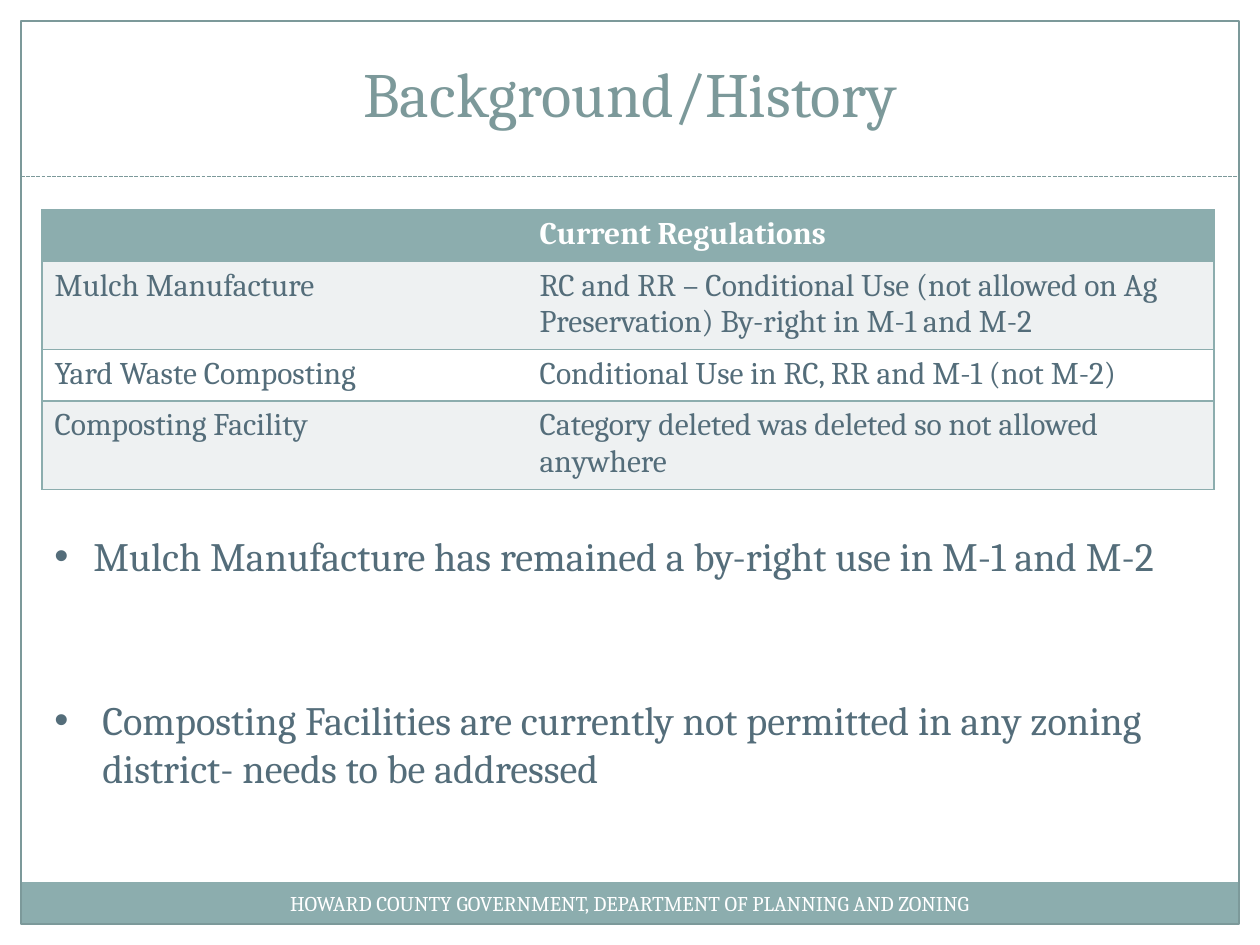
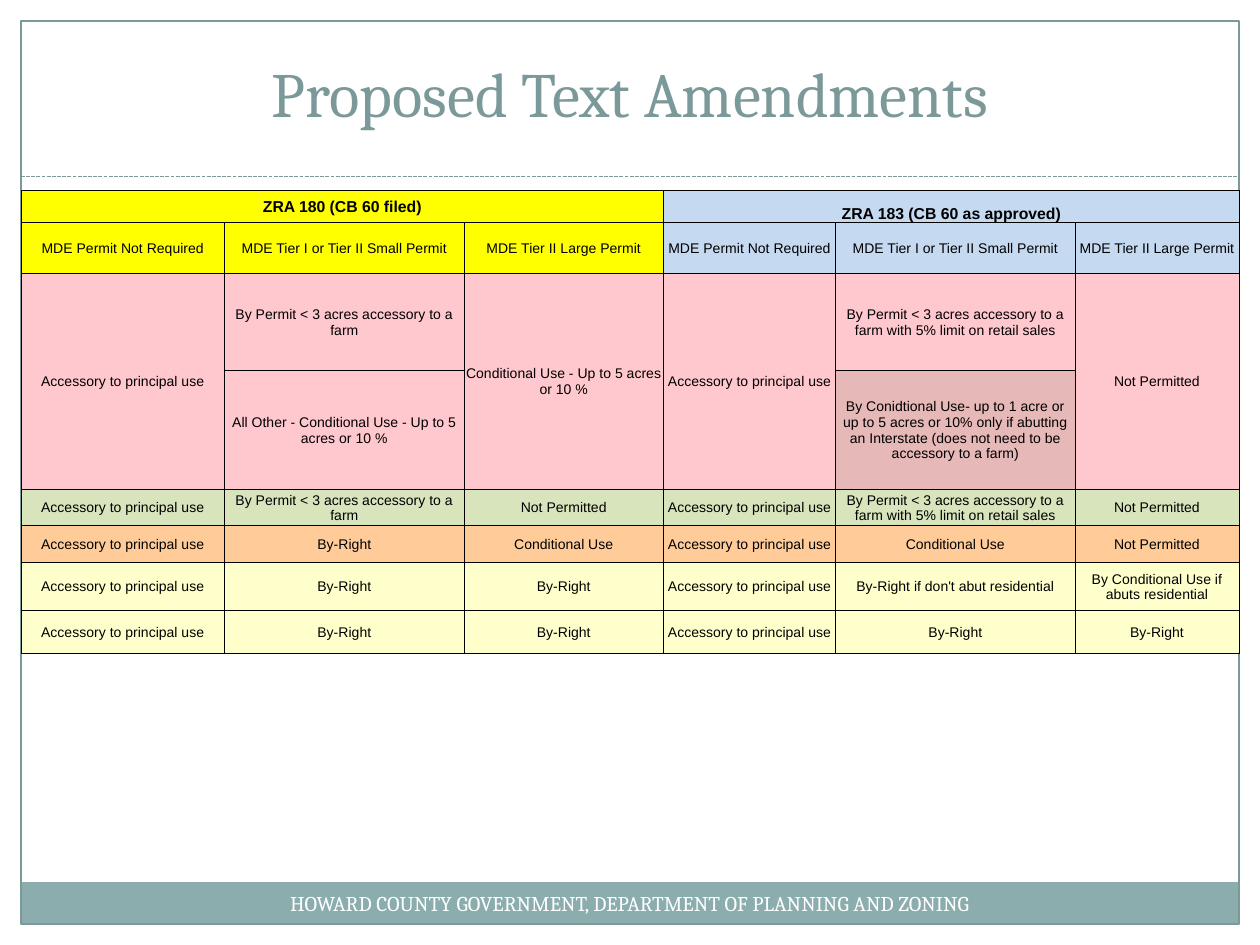
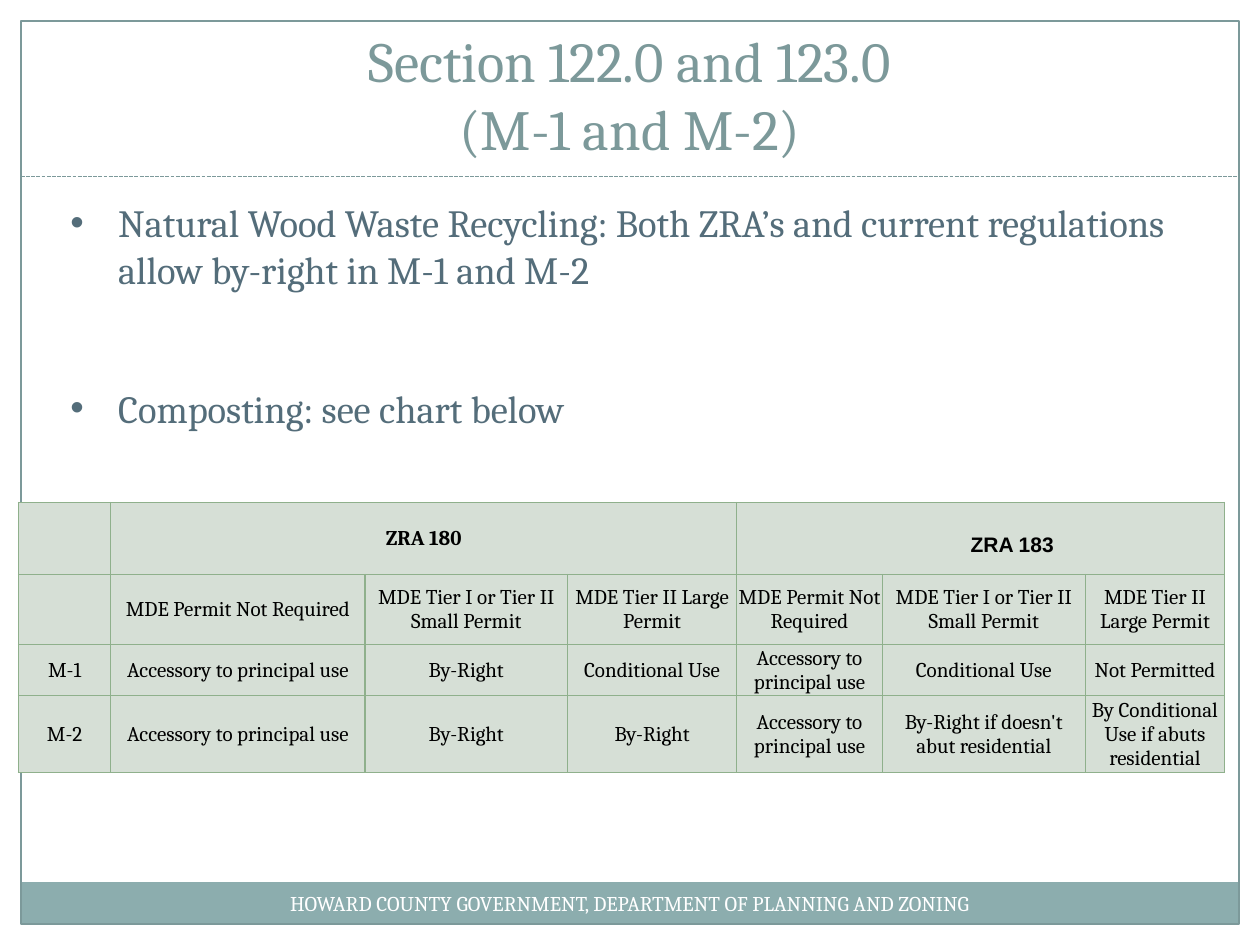
import pptx
import pptx.util
import pptx.dml.color
import pptx.enum.dml
import pptx.enum.shapes
import pptx.enum.text
import pptx.oxml.ns
from lxml import etree

RGB = pptx.dml.color.RGBColor
TEAL = RGB(0x8C, 0xAD, 0xAE)
DEEP_TEAL = RGB(0x7C, 0x99, 0x9A)
SLATE = RGB(0x54, 0x6D, 0x7A)
MIST = RGB(0xEE, 0xF1, 0xF2)
WHITE = RGB(0xFF, 0xFF, 0xFF)
BLACK = RGB(0x00, 0x00, 0x00)
YELLOW = RGB(0xFF, 0xFF, 0x00)
SKY = RGB(0xC5, 0xD9, 0xF1)
PINK = RGB(0xFF, 0xC7, 0xCE)
ROSE = RGB(0xE6, 0xB8, 0xB7)
LIME = RGB(0xD8, 0xE4, 0xBC)
PEACH = RGB(0xFF, 0xCC, 0x99)
CREAM = RGB(0xFF, 0xFF, 0xCC)
SAGE = RGB(0xD6, 0xDF, 0xD6)
LEAF = RGB(0x8F, 0xB0, 0x8C)

ALIGN = pptx.enum.text.PP_ALIGN
ANCHOR = pptx.enum.text.MSO_ANCHOR
COLUMNS, ROWS = 60, 45
FOOTER = "HOWARD COUNTY GOVERNMENT, DEPARTMENT OF PLANNING AND ZONING"
PERMITS = ["MDE Permit Not Required", "MDE Tier I or Tier II Small Permit",
           "MDE Tier II Large Permit"]
ACCESSORY = "Accessory to principal use"
FARM = "By Permit < 3 acres accessory to a farm"
FARM_RETAIL = FARM + " with 5% limit on retail sales"
RIGHT, CONDITIONAL, DENIED = "By-Right", "Conditional Use", "Not Permitted"
ABUTS = "By Conditional Use if abuts residential"


def sub(parent, tag, **attributes):
    return etree.SubElement(parent, pptx.oxml.ns.qn(tag), attributes)


def write(tf, text, size=18, color=SLATE, font="Cambria", bold=False, align=ALIGN.LEFT,
          bullet=False, indent=0, gap=0, spacing=None):
    lines = [text] if isinstance(text, str) else text
    for i, line in enumerate(lines):
        p = tf.paragraphs[0] if i == 0 else tf.add_paragraph()
        p.text = line
        p.alignment = align
        pPr = p._p.get_or_add_pPr()
        if indent:
            margin = pptx.util.Inches(indent)
            pPr.set("marL", str(margin))
            pPr.set("indent", str(-margin if bullet else 0))
        if bullet:
            sub(pPr, "a:buFont", typeface="Arial")
            sub(pPr, "a:buChar", char="•")
        if i and gap:
            p.space_before = pptx.util.Pt(gap)
        if spacing:
            p.line_spacing = spacing
        for r in p.runs:
            r.font.size = pptx.util.Pt(size)
            r.font.name = font
            r.font.bold = bold
            r.font.color.rgb = color


class Deck:
    def __init__(self):
        self.prs = pptx.Presentation()
        self.prs.slide_width = pptx.util.Inches(10)
        self.prs.slide_height = pptx.util.Inches(7.5)
        self.s = None

    def x(self, columns):
        return round(self.prs.slide_width * columns / COLUMNS)

    def y(self, rows):
        return round(self.prs.slide_height * rows / ROWS)

    def area(self, left, top, width, height):
        return self.x(left), self.y(top), self.x(width), self.y(height)

    def slide(self, title, size=36, top=1.5):
        self.s = self.prs.slides.add_slide(self.prs.slide_layouts[6])
        self.rect(1, 42, 58, 2, fill=TEAL)
        self.rect(1, 1, 58, 43, line=DEEP_TEAL)
        self.rule(1, 59, 8.4)
        self.text(2, top, 56, 5, title, anchor=ANCHOR.BOTTOM,
                  size=size, color=DEEP_TEAL, align=ALIGN.CENTER)
        self.text(1, 42, 58, 2, FOOTER, anchor=ANCHOR.MIDDLE,
                  size=12, color=WHITE, align=ALIGN.CENTER)

    def rect(self, left, top, width, height, fill=None, line=None):
        sp = self.s.shapes.add_shape(pptx.enum.shapes.MSO_SHAPE.RECTANGLE,
                                     *self.area(left, top, width, height))
        sp.shadow.inherit = False
        if fill is None:
            sp.fill.background()
        else:
            sp.fill.solid()
            sp.fill.fore_color.rgb = fill
        if line is None:
            sp.line.fill.background()
        else:
            sp.line.color.rgb = line
            sp.line.width = pptx.util.Pt(0.75)

    def rule(self, start, end, row):
        sp = self.s.shapes.add_connector(pptx.enum.shapes.MSO_CONNECTOR.STRAIGHT,
                                         self.x(start), self.y(row), self.x(end), self.y(row))
        sp.line.color.rgb = DEEP_TEAL
        sp.line.width = pptx.util.Pt(0.75)
        sp.line.dash_style = pptx.enum.dml.MSO_LINE.SQUARE_DOT
        sub(sp._element.spPr, "a:effectLst")

    def text(self, left, top, width, height, text, anchor=ANCHOR.TOP, **style):
        tf = self.s.shapes.add_textbox(*self.area(left, top, width, height)).text_frame
        tf.word_wrap = True
        tf.vertical_anchor = anchor
        write(tf, text, **style)

    def border(self, cell, sides, color, width):
        tcPr = cell._tc.get_or_add_tcPr()
        for i, side in enumerate("LRTB"):
            ln = sub(tcPr, "a:ln" + side, w=str(pptx.util.Pt(width)))
            if side in sides:
                sub(sub(ln, "a:solidFill"), "a:srgbClr", val=str(color))
            else:
                sub(ln, "a:noFill")
            tcPr.insert(i, ln)

    def table(self, left, top, widths, heights, data, fill, style, sides,
              line, weight, merges=(), tight=True):
        table = self.s.shapes.add_table(len(heights), len(widths), *self.area(
            left, top, sum(widths), sum(heights))).table
        table.first_row = table.horz_banding = False
        for column, width in zip(table.columns, widths):
            column.width = self.x(width)
        for row, height in zip(table.rows, heights):
            row.height = self.y(height)
        for r, values in enumerate(data):
            for c, value in enumerate(values):
                cell = table.cell(r, c)
                cell.fill.solid()
                cell.fill.fore_color.rgb = fill(r, c)
                self.border(cell, sides(c), line, weight)
                look = dict(style(r, c))
                cell.vertical_anchor = look.pop("anchor", ANCHOR.MIDDLE if tight else ANCHOR.TOP)
                if tight:
                    cell.margin_left = cell.margin_right = cell.margin_top = pptx.util.Inches(0.01)
                    cell.margin_bottom = 0
                    look["align"] = ALIGN.CENTER
                if value:
                    write(cell.text_frame, value, **look)
        for r1, c1, r2, c2 in merges:
            table.cell(r1, c1).merge(table.cell(r2, c2))


def background(deck):
    deck.slide("Background/History")
    data = [
        ["", "Current Regulations"],
        ["Mulch Manufacture",
         "RC and RR – Conditional Use (not allowed on Ag Preservation) By-right in M-1 and M-2"],
        ["Yard Waste Composting", "Conditional Use in RC, RR and M-1 (not M-2)"],
        ["Composting Facility", "Category deleted was deleted so not allowed anywhere"],
    ]
    deck.table(2, 10, [23.1, 32.7], [2.45, 4.05, 2.45, 4.05], data,
               fill=lambda r, c: [TEAL, MIST, WHITE, MIST][r],
               style=lambda r, c: {"bold": r == 0, "color": SLATE if r else WHITE},
               sides=lambda c: ["LTB", "RTB"][c], line=TEAL, weight=1, tight=False)
    deck.text(2, 25, 54.8, 5.3, "Mulch Manufacture has remained a by-right use in M-1 and M-2",
              size=23, bullet=True, indent=0.31)
    deck.text(2, 32.8, 53.2, 5.3, "Composting Facilities are currently not permitted in any "
              "zoning district- needs to be addressed", size=23, bullet=True, indent=0.38)


def amendments(deck):
    deck.slide("Proposed Text Amendments")
    data = [
        ["ZRA 180 (CB 60 filed)", "", "", "ZRA 183 (CB 60 as approved)", "", ""],
        PERMITS * 2,
        [ACCESSORY, FARM, "Conditional Use - Up to 5 acres or 10 %", ACCESSORY, FARM_RETAIL, DENIED],
        ["", "All Other - Conditional Use - Up to 5 acres or 10 %", "", "",
         "By Conidtional Use- up to 1 acre or up to 5 acres or 10% only if abutting an "
         "Interstate (does not need to be accessory to a farm)", ""],
        [ACCESSORY, FARM, DENIED, ACCESSORY, FARM_RETAIL, DENIED],
        [ACCESSORY, RIGHT, CONDITIONAL, ACCESSORY, CONDITIONAL, DENIED],
        [ACCESSORY, RIGHT, RIGHT, ACCESSORY, "By-Right if don't abut residential", ABUTS],
        [ACCESSORY, RIGHT, RIGHT] * 1 + [ACCESSORY, RIGHT, RIGHT],
    ]
    bands = [PINK, PINK, LIME, PEACH, CREAM, CREAM]

    def fill(r, c):
        if r < 2:
            return YELLOW if c < 3 else SKY
        return ROSE if (r, c) == (3, 4) else bands[r - 2]

    def style(r, c):
        return {"font": "Arial", "color": BLACK, "size": 8 if r else 9, "bold": r == 0,
                "anchor": ANCHOR.BOTTOM if (r, c) == (0, 3) else ANCHOR.MIDDLE}

    deck.table(1, 9.06, [9.7, 11.4, 9.5, 8.2, 11.4, 7.8],
               [1.55, 2.4, 4.63, 5.65, 1.75, 1.75, 2.28, 2.05], data, fill, style,
               sides=lambda c: "LRTB", line=BLACK, weight=0.5,
               merges=[(0, 0, 0, 2), (0, 3, 0, 5)] + [(2, c, 3, c) for c in (0, 2, 3, 5)])


def sections(deck):
    deck.slide("Section 122.0 and 123.0\n(M-1 and M-2)", size=32.4, top=3)
    data = [
        ["", "ZRA 180", "", "", "ZRA 183", "", ""],
        [""] + PERMITS * 2,
        ["M-1", ACCESSORY, RIGHT, CONDITIONAL, ACCESSORY, CONDITIONAL, DENIED],
        ["M-2", ACCESSORY, RIGHT, RIGHT, ACCESSORY, "By-Right if doesn't abut residential", ABUTS],
    ]

    def style(r, c):
        look = {"size": 12, "color": BLACK, "bold": r == 0}
        if (r, c) == (0, 4):
            look.update(font="Arial", indent=0.5, spacing=1.5)
        return look

    deck.table(0.88, 23.92, [4.4, 12.1, 9.65, 8.05, 6.95, 9.65, 6.65],
               [3.43, 3.33, 2.43, 3.5], data, fill=lambda r, c: SAGE, style=style,
               sides=lambda c: "LRTB", line=LEAF, weight=0.75,
               merges=[(0, 1, 0, 3), (0, 4, 0, 6)])
    deck.text(2.76, 9.2, 55.1, 11.7,
              ["Natural Wood Waste Recycling: Both ZRA’s and current regulations allow "
               "by-right in M-1 and M-2", "Composting: see chart below"],
              size=22, bullet=True, indent=0.38, gap=53)


def main():
    deck = Deck()
    background(deck)
    amendments(deck)
    sections(deck)
    deck.prs.save("out.pptx")


if __name__ == "__main__":
    main()
